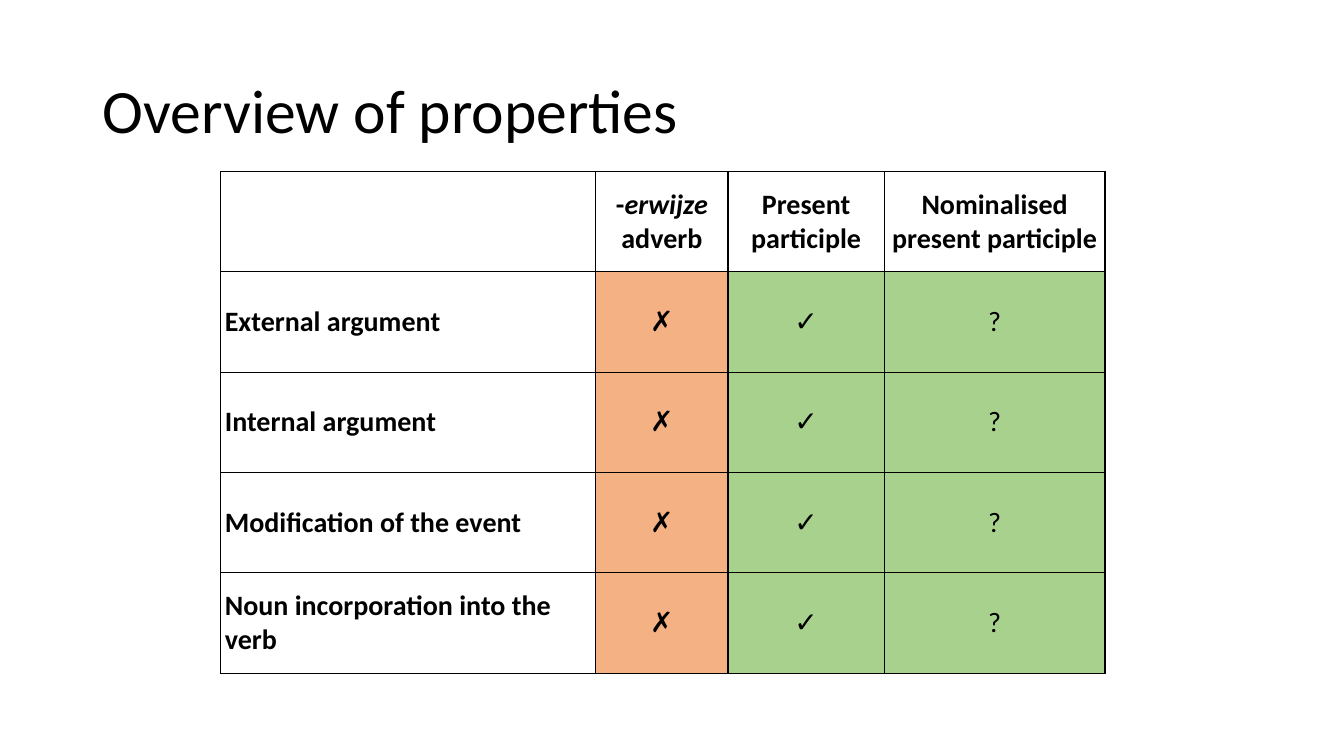
from dataclasses import dataclass

from lxml.etree import SubElement
from pptx import Presentation
from pptx.dml.color import RGBColor
from pptx.enum.text import MSO_ANCHOR, PP_ALIGN
from pptx.oxml.ns import qn
from pptx.slide import Slide
from pptx.table import _Cell
from pptx.text.text import _Paragraph
from pptx.util import Emu, Inches, Pt

BLACK = RGBColor(0x00, 0x00, 0x00)
ORANGE = RGBColor(0xF4, 0xB1, 0x83)
GREEN = RGBColor(0xA9, 0xD1, 0x8E)

FONT = "Calibri"
SLIDE_WIDTH = Inches(13.33)
SLIDE_HEIGHT = Inches(7.5)
CELL_MARGIN = Inches(0.04)
BORDER_WIDTH = Pt(1)
COLUMN_SHARES = (27.91, 9.83, 11.63, 16.43)
ROW_SHARE = 13.28


@dataclass(frozen=True)
class TextRun:
    text: str
    bold: bool = True
    italic: bool = False


@dataclass(frozen=True)
class TableEntry:
    runs: tuple[TextRun, ...] = ()
    fill: RGBColor | None = None
    alignment: PP_ALIGN = PP_ALIGN.CENTER


HEADER = (
    TableEntry(),
    TableEntry((TextRun("-"), TextRun("erwijze", italic=True), TextRun(" adverb"))),
    TableEntry((TextRun("Present participle"),)),
    TableEntry((TextRun("Nominalised present participle"),)),
)
VERDICTS = (
    TableEntry((TextRun("✗", bold=False),), ORANGE),
    TableEntry((TextRun("✓", bold=False),), GREEN),
    TableEntry((TextRun("?", bold=False),), GREEN),
)
PROPERTIES = (
    "External argument",
    "Internal argument",
    "Modification of the event",
    "Noun incorporation into the verb",
)


def across(percent: float) -> Emu:
    """Turn a percentage of the slide's width into a length."""
    return Emu(round(SLIDE_WIDTH * percent / 100))


def down(percent: float) -> Emu:
    """Turn a percentage of the slide's height into a length."""
    return Emu(round(SLIDE_HEIGHT * percent / 100))


def add_text_run(paragraph: _Paragraph, text_run: TextRun, size: int) -> None:
    run = paragraph.add_run()
    run.text = text_run.text
    run.font.name = FONT
    run.font.size = Pt(size)
    run.font.bold = text_run.bold
    run.font.italic = text_run.italic
    run.font.color.rgb = BLACK


def add_borders(cell: _Cell) -> None:
    """Line all four sides; must run before the cell's fill is set."""
    properties = cell._tc.get_or_add_tcPr()
    for side in ("a:lnL", "a:lnR", "a:lnT", "a:lnB"):
        line = SubElement(properties, qn(side), w=str(BORDER_WIDTH))
        fill = SubElement(line, qn("a:solidFill"))
        SubElement(fill, qn("a:srgbClr"), val=str(BLACK))


def fill_cell(cell: _Cell, entry: TableEntry) -> None:
    add_borders(cell)
    if entry.fill is None:
        cell.fill.background()
    else:
        cell.fill.solid()
        cell.fill.fore_color.rgb = entry.fill
    cell.vertical_anchor = MSO_ANCHOR.MIDDLE
    cell.margin_left = cell.margin_right = CELL_MARGIN
    cell.margin_top = cell.margin_bottom = CELL_MARGIN
    paragraph = cell.text_frame.paragraphs[0]
    paragraph.alignment = entry.alignment
    for text_run in entry.runs:
        add_text_run(paragraph, text_run, 20)


def set_title(slide: Slide, text: str) -> None:
    title = slide.shapes.title
    title.left, title.top = across(6.9), down(5.33)
    title.width, title.height = across(86.27), down(19.33)
    title.text_frame.vertical_anchor = MSO_ANCHOR.MIDDLE
    paragraph = title.text_frame.paragraphs[0]
    paragraph.alignment = PP_ALIGN.LEFT
    paragraph.line_spacing = 0.9
    add_text_run(paragraph, TextRun(text, bold=False), 44)


def add_property_table(slide: Slide) -> None:
    entries = [HEADER]
    for name in PROPERTIES:
        label = TableEntry((TextRun(name),), alignment=PP_ALIGN.LEFT)
        entries.append((label, *VERDICTS))
    table = slide.shapes.add_table(
        len(entries), len(COLUMN_SHARES), across(16.43), down(22.67),
        across(sum(COLUMN_SHARES)), down(ROW_SHARE * len(entries)),
    ).table
    table.first_row = False
    table.horz_banding = False
    for column, share in zip(table.columns, COLUMN_SHARES):
        column.width = across(share)
    for row, row_entries in zip(table.rows, entries):
        row.height = down(ROW_SHARE)
        for cell, entry in zip(row.cells, row_entries):
            fill_cell(cell, entry)


def main() -> None:
    presentation = Presentation()
    presentation.slide_width = SLIDE_WIDTH
    presentation.slide_height = SLIDE_HEIGHT
    slide = presentation.slides.add_slide(presentation.slide_layouts[5])
    set_title(slide, "Overview of properties")
    add_property_table(slide)
    presentation.save("out.pptx")


if __name__ == "__main__":
    main()
